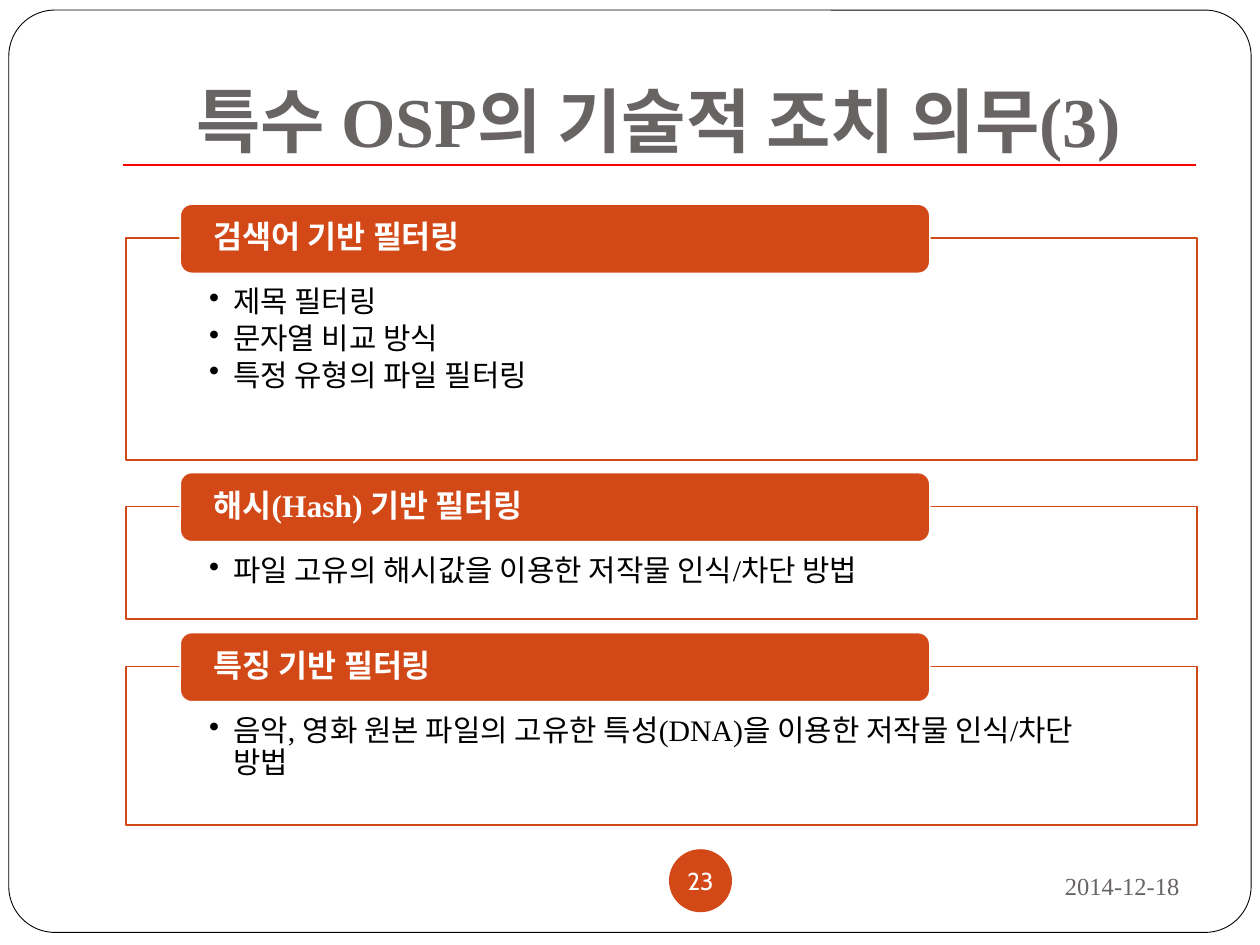
from lxml import etree
from pptx import Presentation
from pptx.dml.color import RGBColor
from pptx.enum import shapes, text
from pptx.oxml import ns
from pptx.util import Inches, Pt

SERIF = "Times New Roman"
RUST, GREY, WHITE, BLACK = "D34817", "696464", "FFFFFF", "000000"
LEFT, MID = text.PP_ALIGN.LEFT, text.MSO_ANCHOR.MIDDLE
KIND = shapes.MSO_SHAPE


def rgb(code):
    return RGBColor.from_string(code)


def add(kind, box, fill=None, line=None, width=1, lines=(), size=14, color=BLACK,
        bold=False, font=SERIF, align=LEFT, anchor=MID, pad=(0.1, 0.05, 0.1, 0.05)):
    box = [Inches(n) for n in box]
    if kind is None:
        shape = slide.shapes.add_textbox(*box)
    else:
        shape = slide.shapes.add_shape(kind, *box)
        shape.shadow.inherit = False
        shape.fill.solid()
        shape.fill.fore_color.rgb = rgb(fill)
        if line:
            shape.line.color.rgb = rgb(line)
            shape.line.width = Pt(width)
        else:
            shape.line.fill.background()
    frame = shape.text_frame
    frame.word_wrap = True
    frame.vertical_anchor = anchor
    frame.margin_left, frame.margin_top, frame.margin_right, frame.margin_bottom = map(Inches, pad)
    for i, words in enumerate(lines):
        para = frame.paragraphs[0] if i == 0 else frame.add_paragraph()
        para.text = words
        para.alignment = align
        para.font.size, para.font.bold, para.font.name = Pt(size), bold, font
        para.font.color.rgb = rgb(color)
    return shape


deck = Presentation()
deck.slide_width, deck.slide_height = Inches(10), Inches(7.5)
slide = deck.slides.add_slide(deck.slide_layouts[6])

frame = add(KIND.ROUNDED_RECTANGLE, (0.07, 0.08, 9.86, 7.32), WHITE, BLACK, 0.5)
frame.adjustments[0] = 0.05

rule = slide.shapes.add_connector(shapes.MSO_CONNECTOR.STRAIGHT, Inches(0.98), Inches(1.31),
                                  Inches(9.49), Inches(1.31))
rule.line.color.rgb = rgb("FF0000")
rule.line.width = Pt(1.5)
etree.SubElement(rule.element.spPr, ns.qn("a:effectLst"))

add(None, (0.98, 0.13, 8.5, 1.25), lines=["특수 OSP의 기술적 조치 의무(3)"], size=40,
    color=GREY, bold=True, align=text.PP_ALIGN.CENTER, anchor=text.MSO_ANCHOR.BOTTOM,
    pad=(0.1, 0.05, 0.1, 0.1))

parts = [
    ("검색어 기반 필터링", 1.89, 1.76, ["제목 필터링", "문자열 비교 방식", "특정 유형의 파일 필터링"]),
    ("해시(Hash) 기반 필터링", 4.02, 0.89, ["파일 고유의 해시값을 이용한 저작물 인식/차단 방법"]),
    ("특징 기반 필터링", 5.29, 1.26,
     ["음악, 영화 원본 파일의 고유한 특성(DNA)을 이용한 저작물 인식/차단 방법"]),
]
for head, top, height, points in parts:
    body = add(KIND.RECTANGLE, (1, top, 8.5, height), WHITE, RUST, lines=points, size=17,
               anchor=text.MSO_ANCHOR.TOP, pad=(0.66, 0.39, 0.66, 0.13))
    for para in body.text_frame.paragraphs:
        para.line_spacing = 0.9
        para.space_after = Pt(2.55)
        props = para._p.get_or_add_pPr()
        props.set("marL", str(Inches(0.19)))
        props.set("indent", str(-Inches(0.19)))
        etree.SubElement(props, ns.qn("a:buChar"), char="•")
        props.append(props.find(ns.qn("a:defRPr")))
    tab = add(KIND.ROUNDED_RECTANGLE, (1.43, top - 0.27, 5.95, 0.55), RUST, WHITE, lines=[head],
              size=18, color=WHITE, bold=True, pad=(0.24, 0, 0.24, 0))
    tab.text_frame.paragraphs[0].line_spacing = 0.9

add(None, (6.75, 6.77, 2.71, 0.52), lines=["2014-12-18"], color=GREY, align=text.PP_ALIGN.RIGHT)
badge = add(KIND.OVAL, (5.31, 6.74, 0.5, 0.5), RUST, lines=["23"], color=WHITE, font="Cabin",
            align=text.PP_ALIGN.CENTER, pad=(0, 0, 0, 0))
badge.text_frame.word_wrap = False

deck.save("out.pptx")
